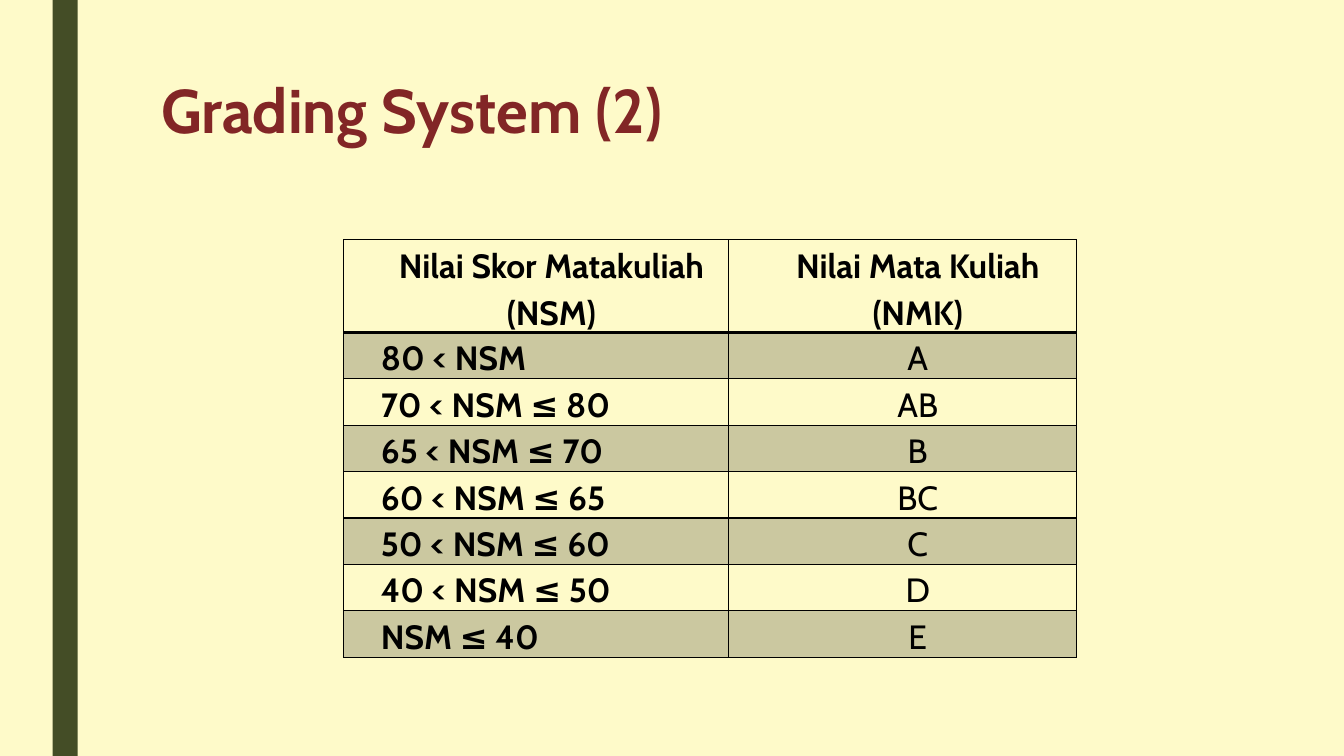
from lxml import etree
from pptx import Presentation
from pptx.dml.color import RGBColor
from pptx.enum import shapes, text
from pptx.oxml import ns
from pptx.util import Pt

FONT = "Cabin"
BLACK = "000000"
HEADINGS = ("Nilai Skor Matakuliah (NSM)", "Nilai Mata Kuliah (NMK)")
GRADES = (
    ("80 < NSM", "A"),
    ("70 < NSM ≤ 80", "AB"),
    ("65 < NSM ≤ 70", "B"),
    ("60 < NSM ≤ 65", "BC"),
    ("50 < NSM ≤ 60", "C"),
    ("40 < NSM ≤ 50", "D"),
    ("NSM ≤ 40", "E"),
)
COLUMN_WIDTHS = (275, 248.5)
HEADER_HEIGHT, GRADE_HEIGHT = 60.5, 29.5
CELL_FORMAT = {"margin_left": Pt(5), "margin_right": Pt(5), "margin_top": 0, "margin_bottom": 0}


def colour(hex_string):
    return RGBColor.from_string(hex_string)


def apply(target, values):
    for name, value in values.items():
        setattr(target, name, value)


def write(paragraph, words, size, hex_string, bold, spacing, align):
    run = paragraph.add_run()
    run.text = words
    apply(run.font, {"name": FONT, "size": Pt(size), "bold": bold})
    run.font.color.rgb = colour(hex_string)
    apply(paragraph, {"line_spacing": spacing, "alignment": align})


def add_bar(slide, left, width, height):
    bar = slide.shapes.add_shape(shapes.MSO_SHAPE.RECTANGLE, Pt(left), 0, Pt(width), height)
    bar.shadow.inherit = False
    bar.fill.solid()
    bar.fill.fore_color.rgb = colour("444D26")
    bar.line.fill.background()


def add_title(slide, words):
    frame = slide.shapes.add_textbox(Pt(108), Pt(54), Pt(756), Pt(116.64)).text_frame
    apply(frame, {"word_wrap": True, "vertical_anchor": text.MSO_ANCHOR.TOP})
    write(frame.paragraphs[0], words, 44, "822626", True, 0.89, text.PP_ALIGN.LEFT)


def add_border(cell, side, width):
    properties = cell._tc.get_or_add_tcPr()
    line = etree.SubElement(properties, ns.qn(f"a:ln{side}"), w=str(Pt(width)))
    fill = etree.SubElement(line, ns.qn("a:solidFill"))
    etree.SubElement(fill, ns.qn("a:srgbClr"), val=BLACK)


def shade(cell, percent):
    cell.fill.solid()
    cell.fill.fore_color.rgb = colour(BLACK)
    tint = next(cell._tc.tcPr.iter(ns.qn("a:srgbClr"), ns.qn("a:solidFill")))
    tint = cell._tc.tcPr.find(ns.qn("a:solidFill")).find(ns.qn("a:srgbClr"))
    etree.SubElement(tint, ns.qn("a:alpha"), val=str(percent * 1000))


def fill_cell(cell, words, row, column):
    header = row == 0
    apply(cell, CELL_FORMAT)
    paragraph = cell.text_frame.paragraphs[0]
    centred = header or column == 1
    align = text.PP_ALIGN.CENTER if centred else text.PP_ALIGN.LEFT
    write(paragraph, words, 24, BLACK, header or column == 0, 1.15, align)
    paragraph._p.get_or_add_pPr().set("marL", str(Pt(21.6)))
    widths = {"L": 1, "R": 1, "T": 2 if row == 1 else 1, "B": 2 if header else 1}
    for side, width in widths.items():
        add_border(cell, side, width)
    if row % 2:
        shade(cell, 20)
    else:
        cell.fill.background()


def add_grades(slide):
    rows = (HEADINGS, *GRADES)
    heights = [HEADER_HEIGHT] + [GRADE_HEIGHT] * len(GRADES)
    grades = slide.shapes.add_table(
        len(rows), len(HEADINGS), Pt(245.5), Pt(171.2), Pt(sum(COLUMN_WIDTHS)), Pt(sum(heights))
    ).table
    grades.horz_banding = False
    for column, width in zip(grades.columns, COLUMN_WIDTHS):
        column.width = Pt(width)
    for row, height in enumerate(heights):
        grades.rows[row].height = Pt(height)
        for column, words in enumerate(rows[row]):
            fill_cell(grades.cell(row, column), words, row, column)


def main():
    deck = Presentation()
    apply(deck, {"slide_width": Pt(960), "slide_height": Pt(540)})
    slide = deck.slides.add_slide(deck.slide_layouts[6])
    slide.background.fill.solid()
    slide.background.fill.fore_color.rgb = colour("FEFAC9")
    add_bar(slide, 37.5, 18, deck.slide_height)
    add_title(slide, "Grading System (2)")
    add_grades(slide)
    deck.save("out.pptx")


if __name__ == "__main__":
    main()
